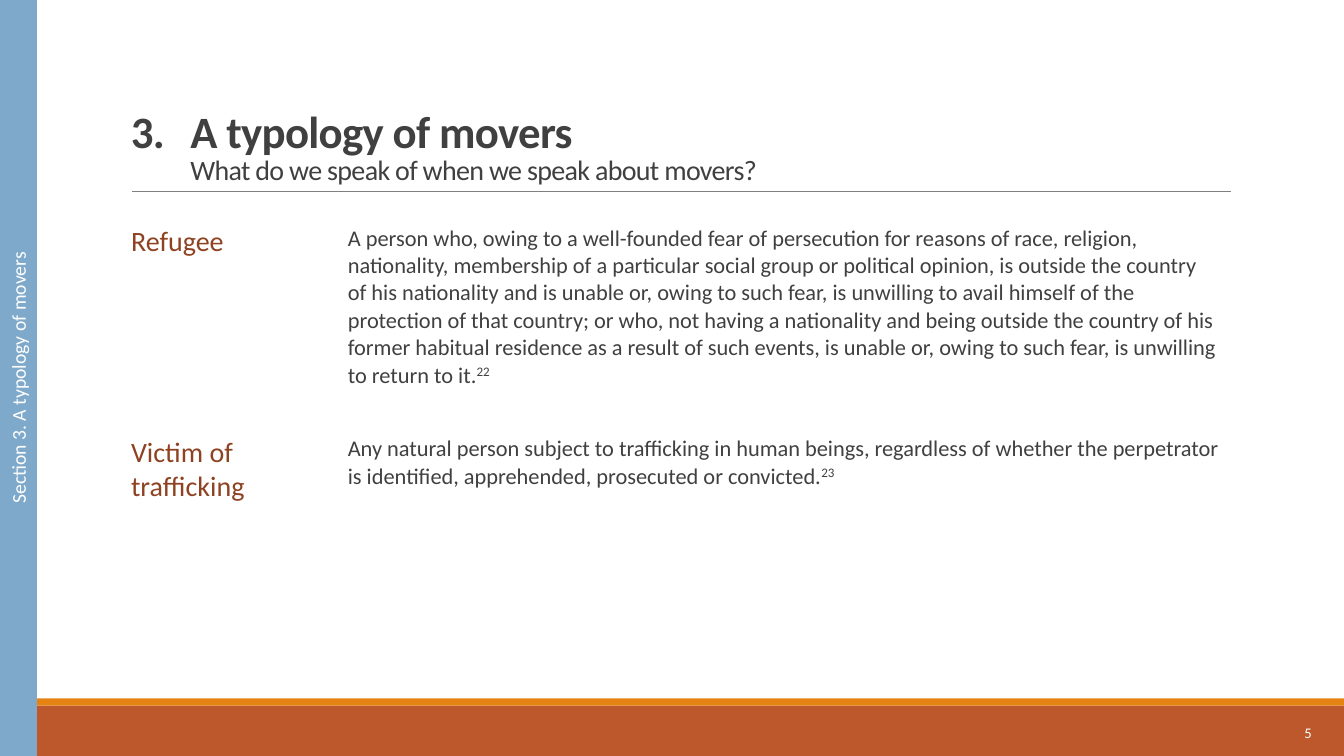
from dataclasses import dataclass

import pptx
import pptx.dml.color
import pptx.enum.shapes
import pptx.enum.text
import pptx.oxml
import pptx.oxml.ns
import pptx.util
from pptx.presentation import Presentation as Deck
from pptx.shapes.autoshape import Shape
from pptx.slide import Slide

Inches = pptx.util.Inches
Anchor = pptx.enum.text.MSO_ANCHOR
Align = pptx.enum.text.PP_ALIGN


@dataclass(frozen=True)
class Theme:
    font: str = "Calibri"
    text: str = "404040"
    term: str = "8E4221"
    white: str = "FFFFFF"
    rust: str = "BD582C"
    orange: str = "E48312"
    blue: str = "7EA9CA"
    rule: str = "808080"
    title_size: float = 32
    subtitle_size: float = 20
    term_size: float = 20
    body_size: float = 16
    section_size: float = 14
    number_size: float = 10.5


@dataclass(frozen=True)
class Band:
    left: float
    top: float
    width: float
    height: float
    color: str


@dataclass(frozen=True)
class Definition:
    term: str
    meaning: str
    note: str
    height: float


THEME = Theme()
FOOTER = Band(0, 7, 13.33, 0.5, THEME.rust)
FOOTER_EDGE = Band(0, 6.93, 13.33, 0.07, THEME.orange)
SECTION_BAR = Band(0, 0, 0.36, 7.5, THEME.blue)
COLUMN_WIDTHS = (2.15, 8.85)
DEFINITIONS = (
    Definition(
        "Refugee",
        "A person who, owing to a well-founded fear of persecution for reasons of race, "
        "religion, nationality, membership of a particular social group or political opinion, "
        "is outside the country of his nationality and is unable or, owing to such fear, is "
        "unwilling to avail himself of the protection of that country; or who, not having a "
        "nationality and being outside the country of his former habitual residence as a result "
        "of such events, is unable or, owing to such fear, is unwilling to return to it.",
        "22", 2.09),
    Definition(
        "Victim of trafficking",
        "Any natural person subject to trafficking in human beings, regardless of whether the "
        "perpetrator is identified, apprehended, prosecuted or convicted.",
        "23", 1.27),
    Definition("", "", "", 0.67),
)


def rgb(color: str) -> pptx.dml.color.RGBColor:
    return pptx.dml.color.RGBColor.from_string(color)


def style(font: pptx.text.text.Font, size: float, color: str) -> None:
    font.name = THEME.font
    font.size = pptx.util.Pt(size)
    font.color.rgb = rgb(color)


def add_band(slide: Slide, band: Band) -> Shape:
    bar = slide.shapes.add_shape(
        pptx.enum.shapes.MSO_SHAPE.RECTANGLE, Inches(band.left), Inches(band.top),
        Inches(band.width), Inches(band.height))
    bar.shadow.inherit = False
    bar.fill.solid()
    bar.fill.fore_color.rgb = rgb(band.color)
    bar.line.fill.background()
    return bar


def add_rule(slide: Slide) -> None:
    rule = slide.shapes.add_connector(
        pptx.enum.shapes.MSO_CONNECTOR.STRAIGHT,
        Inches(1.31), Inches(1.9), Inches(12.21), Inches(1.9))
    rule.line.color.rgb = rgb(THEME.rule)
    rule.line.width = pptx.util.Pt(0.5)
    rule._element.spPr.append(pptx.oxml.parse_xml(
        f"<a:effectLst {pptx.oxml.ns.nsdecls('a')}/>"))


def add_title(slide: Slide) -> None:
    title = slide.shapes.add_textbox(Inches(1.2), Inches(0.31), Inches(11), Inches(1.59))
    title.text_frame.word_wrap = True
    title.text_frame.vertical_anchor = Anchor.BOTTOM
    heading = title.text_frame.paragraphs[0]
    heading.line_spacing = 0.85
    properties = heading._p.get_or_add_pPr()
    properties.set("marL", str(Inches(0.59)))
    properties.set("indent", str(Inches(-0.59)))
    main = heading.add_run()
    main.text = "3.\tA typology of movers"
    heading.add_line_break()
    question = heading.add_run()
    question.text = "What do we speak of when we speak about movers?"
    for run, size, bold in ((main, THEME.title_size, True),
                            (question, THEME.subtitle_size, False)):
        style(run.font, size, THEME.text)
        run.font.bold = bold
        run.font._element.set("spc", "-50")


def add_slide_number(slide: Slide) -> None:
    number = slide.shapes.add_textbox(Inches(11.68), Inches(7.07), Inches(1.43), Inches(0.4))
    number.text_frame.word_wrap = True
    number.text_frame.vertical_anchor = Anchor.MIDDLE
    paragraph = number.text_frame.paragraphs[0]
    paragraph.text = "5"
    paragraph.alignment = Align.RIGHT
    style(paragraph.font, THEME.number_size, THEME.white)


def add_definitions(slide: Slide) -> None:
    table = slide.shapes.add_table(
        len(DEFINITIONS), len(COLUMN_WIDTHS), Inches(1.2), Inches(2.18),
        Inches(sum(COLUMN_WIDTHS)), Inches(sum(d.height for d in DEFINITIONS))).table
    table.first_row = False
    table.horz_banding = False
    for column, width in zip(table.columns, COLUMN_WIDTHS):
        column.width = Inches(width)
    for row, definition in zip(table.rows, DEFINITIONS):
        row.height = Inches(definition.height)
        term, meaning = row.cells
        for cell, text, size, color in (
                (term, definition.term, THEME.term_size, THEME.term),
                (meaning, definition.meaning, THEME.body_size, THEME.text)):
            cell.fill.background()
            paragraph = cell.text_frame.paragraphs[0]
            if text:
                paragraph.add_run().text = text
            style(paragraph.font, size, color)
        if definition.note:
            note = meaning.text_frame.paragraphs[0].add_run()
            note.text = definition.note
            note.font._element.set("baseline", "30000")


def add_section_bar(slide: Slide) -> None:
    bar = add_band(slide, SECTION_BAR)
    bar.line.color.rgb = rgb(THEME.blue)
    bar.line.width = pptx.util.Pt(1.25)
    frame = bar.text_frame
    frame.vertical_anchor = Anchor.MIDDLE
    frame._txBody.bodyPr.set("vert", "vert270")
    paragraph = frame.paragraphs[0]
    paragraph.text = "Section 3. A typology of movers"
    paragraph.alignment = Align.CENTER
    style(paragraph.font, THEME.section_size, THEME.white)


def main() -> None:
    deck: Deck = pptx.Presentation()
    deck.slide_width = Inches(13.33)
    deck.slide_height = Inches(7.5)
    slide = deck.slides.add_slide(deck.slide_layouts[6])
    for band in (FOOTER, FOOTER_EDGE):
        add_band(slide, band)
    add_rule(slide)
    add_title(slide)
    add_slide_number(slide)
    add_definitions(slide)
    add_section_bar(slide)
    deck.save("out.pptx")


if __name__ == "__main__":
    main()
